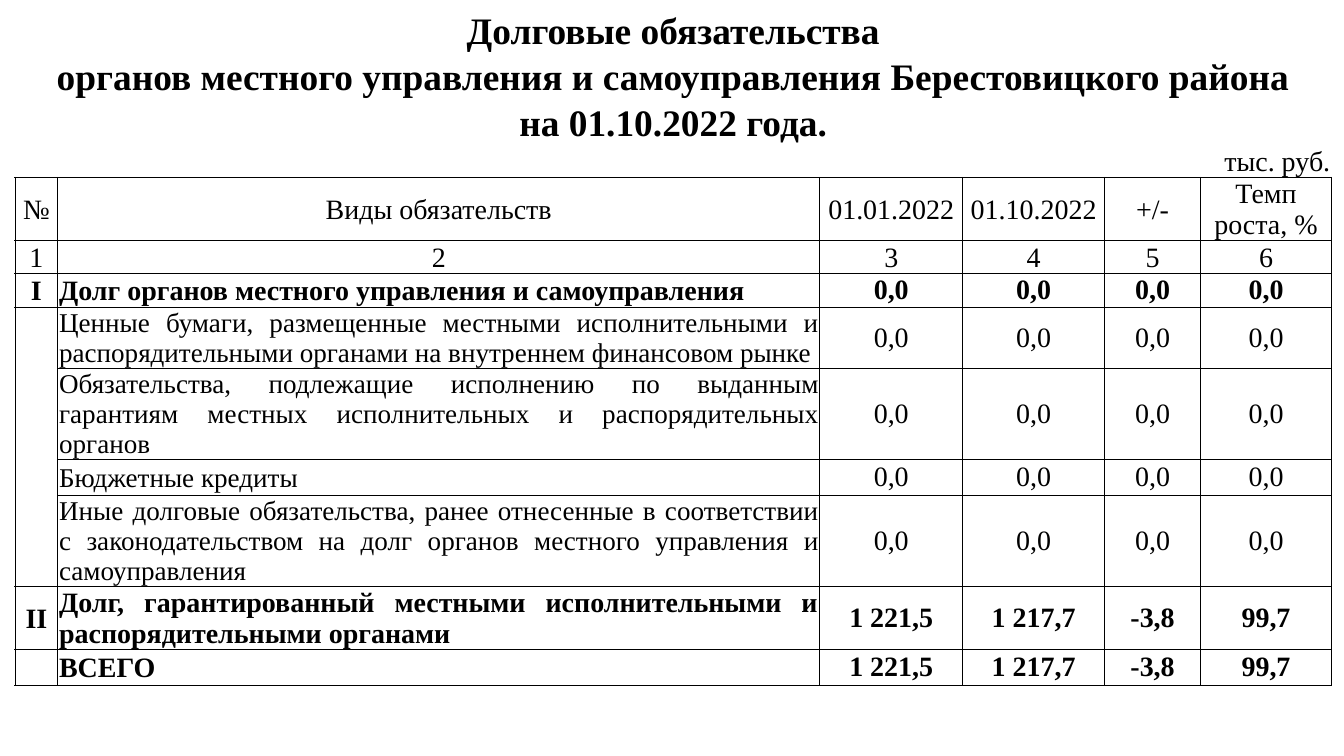
import pptx
import pptx.dml.color
import pptx.enum.text
import pptx.util
from lxml import etree
from pptx.oxml.ns import qn

Pt = pptx.util.Pt
ALIGN = pptx.enum.text.PP_ALIGN
ANCHOR = pptx.enum.text.MSO_ANCHOR
BLACK = pptx.dml.color.RGBColor(0, 0, 0)
WHITE = pptx.dml.color.RGBColor(255, 255, 255)
FONT = "Times New Roman"
HEADING_SIZE, BODY_SIZE, ITEM_SIZE = 20, 15, 14.5

COLUMN_WIDTHS = [23, 408.2, 76.6, 76, 51.4, 70.2]
ROW_HEIGHTS = [24.6, 24.6, 24.6, 17.7, 33.7, 17.7, 17.7, 32.7, 48.7, 17.7, 48.7, 33.2, 18.7]

HEADING = [
    "Долговые обязательства",
    "органов местного управления и самоуправления Берестовицкого района",
    "на 01.10.2022 года.",
]
UNIT = "тыс. руб."
COLUMN_TITLES = ["№", "Виды обязательств", "01.01.2022", "01.10.2022", "+/-", "Темп\nроста, %"]
COLUMN_NUMBERS = ["1", "2", "3", "4", "5", "6"]
ZEROS = ["0,0"] * 4
TOTALS = ["1 221,5", "1 217,7", "-3,8", "99,7"]
DEBTS = [
    ("I", "Долг органов местного управления и самоуправления", ZEROS, True),
    ("", "Ценные бумаги, размещенные местными исполнительными и "
         "распорядительными органами на внутреннем финансовом рынке", ZEROS, False),
    ("", "Обязательства, подлежащие исполнению по выданным гарантиям местных "
         "исполнительных и распорядительных органов", ZEROS, False),
    ("", "Бюджетные кредиты", ZEROS, False),
    ("", "Иные долговые обязательства, ранее отнесенные в соответствии с "
         "законодательством на долг органов местного управления и самоуправления", ZEROS, False),
    ("II", "Долг, гарантированный местными исполнительными и распорядительными органами",
     TOTALS, True),
    ("", "ВСЕГО", TOTALS, True),
]


def set_borders(cell, sides):
    properties = cell._tc.get_or_add_tcPr()
    for side in "LRTB":
        line = etree.SubElement(properties, qn(f"a:ln{side}"), w=str(Pt(0.5)))
        if side in sides:
            fill = etree.SubElement(line, qn("a:solidFill"))
            etree.SubElement(fill, qn("a:srgbClr"), val=str(BLACK))
        else:
            etree.SubElement(line, qn("a:noFill"))


def write_cell(cell, text, size=BODY_SIZE, bold=False, align=ALIGN.CENTER,
               anchor=ANCHOR.MIDDLE, sides="LRTB", filled=False):
    set_borders(cell, sides)
    if filled:
        cell.fill.solid()
        cell.fill.fore_color.rgb = WHITE
    else:
        cell.fill.background()
    cell.margin_left = cell.margin_right = cell.margin_top = Pt(0.7)
    cell.margin_bottom = Pt(0.7 if filled else 0)
    cell.vertical_anchor = anchor
    cell.text_frame.text = text
    for paragraph in cell.text_frame.paragraphs:
        paragraph.alignment = align
        for run in paragraph.runs:
            run.font.name = FONT
            run.font.size = Pt(size)
            run.font.bold = bold
            run.font.color.rgb = BLACK
        if not paragraph.runs:
            paragraph._p.get_or_add_endParaRPr().set("sz", str(int(size * 100)))


def write_spanning_row(table, row, text, **style):
    last = len(COLUMN_WIDTHS) - 1
    table.cell(row, 0).merge(table.cell(row, last))
    write_cell(table.cell(row, 0), text, anchor=ANCHOR.BOTTOM, **style)
    for column in range(1, last + 1):
        write_cell(table.cell(row, column), "", sides=style["sides"])


def write_debt_row(table, row, number, debt, values, bold, sides):
    size = BODY_SIZE if bold else ITEM_SIZE
    align = ALIGN.LEFT if debt == "ВСЕГО" else ALIGN.JUSTIFY
    write_cell(table.cell(row, 0), number, bold=bold, sides=sides)
    write_cell(table.cell(row, 1), debt, size=size, bold=bold, align=align)
    for column, value in enumerate(values, 2):
        write_cell(table.cell(row, column), value, bold=bold, filled=True)


def add_debt_table(slide):
    table = slide.shapes.add_table(
        len(ROW_HEIGHTS), len(COLUMN_WIDTHS), Pt(8), Pt(3.6),
        Pt(sum(COLUMN_WIDTHS)), Pt(sum(ROW_HEIGHTS))).table
    table.first_row = table.horz_banding = False
    for column, width in zip(table.columns, COLUMN_WIDTHS):
        column.width = Pt(width)
    for row, height in zip(table.rows, ROW_HEIGHTS):
        row.height = Pt(height)
    return table


def main():
    presentation = pptx.Presentation()
    presentation.slide_width, presentation.slide_height = Pt(720), Pt(405)
    slide = presentation.slides.add_slide(presentation.slide_layouts[6])
    table = add_debt_table(slide)

    for row, line in enumerate(HEADING):
        write_spanning_row(table, row, line, size=HEADING_SIZE, bold=True, sides="")
    unit_row = len(HEADING)
    write_spanning_row(table, unit_row, UNIT, align=ALIGN.RIGHT, sides="B")
    for column, (title, number) in enumerate(zip(COLUMN_TITLES, COLUMN_NUMBERS)):
        write_cell(table.cell(unit_row + 1, column), title)
        write_cell(table.cell(unit_row + 2, column), number, anchor=ANCHOR.BOTTOM)

    first_item, last_item = 1, 4
    for index, (number, debt, values, bold) in enumerate(DEBTS):
        sides = "LR" if first_item <= index <= last_item else "LRTB"
        if index == first_item:
            sides += "T"
        if index == last_item:
            sides += "B"
        write_debt_row(table, unit_row + 3 + index, number, debt, values, bold, sides)

    presentation.save("out.pptx")


if __name__ == "__main__":
    main()
